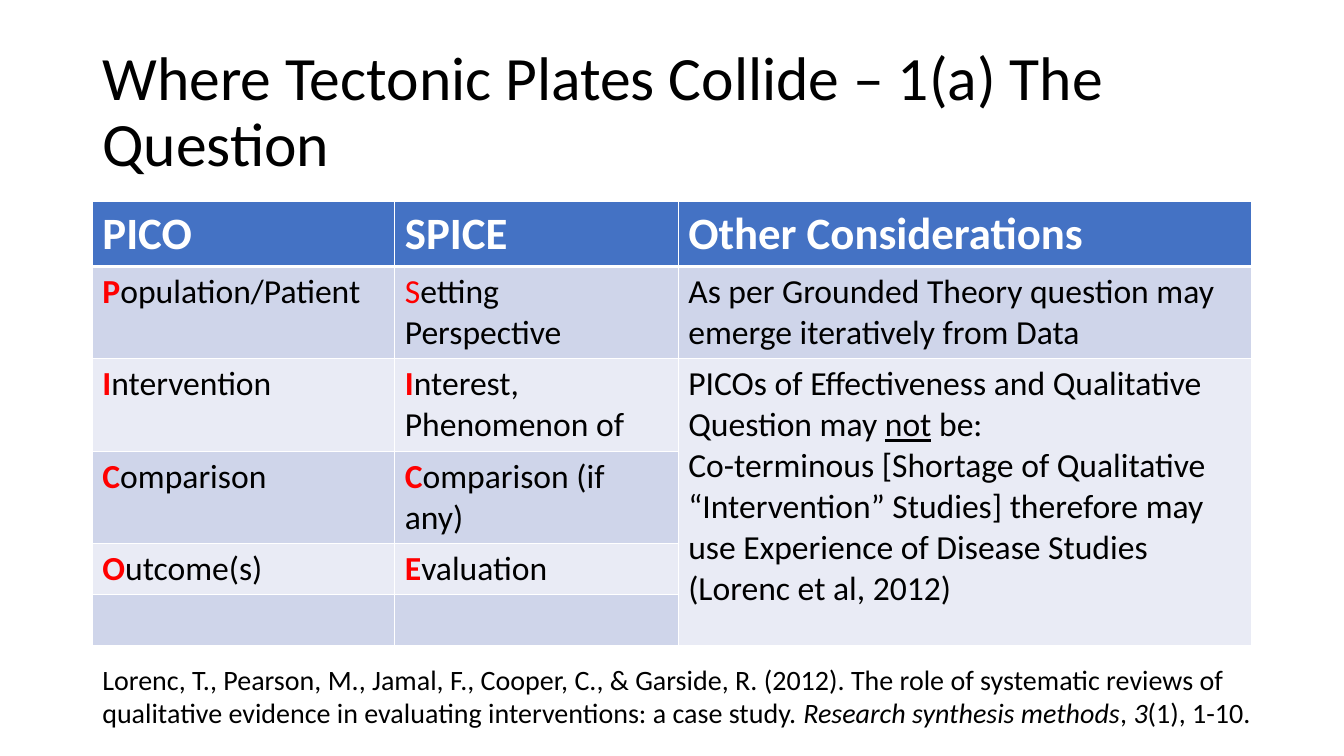
import dataclasses

import lxml.etree
import pptx
import pptx.dml.color
import pptx.enum.text
import pptx.oxml
import pptx.oxml.ns
import pptx.table
import pptx.text.text
import pptx.util

Pt = pptx.util.Pt
FONT = "Calibri"
COLOURS = {
    "text": "000000",
    "initial": "FF0000",
    "header_text": "FFFFFF",
    "header": "4472C4",
    "odd_row": "CFD5EA",
    "even_row": "E9EBF5",
    "border": "FFFFFF",
}
LEFT, WIDTH = 66, 828
COLUMN_WIDTHS = (216, 202.5, 409.5)
ROW_HEIGHTS = (46, 66, 66, 66, 36.5, 36.5)


@dataclasses.dataclass(frozen=True)
class Span:
    text: str
    colour: str = "text"
    bold: bool = False
    italic: bool = False
    underline: bool = False


Paragraph = list[Span]
CellText = list[Paragraph]


def mnemonic(term: str, bold: bool = True) -> Paragraph:
    """Set off the first letter of a term in red."""
    return [Span(term[0], "initial", bold), Span(term[1:])]


def heading(label: str) -> CellText:
    return [[Span(label, "header_text", bold=True)]]


QUESTION_ROWS: list[list[CellText]] = [
    [heading("PICO"), heading("SPICE"), heading("Other Considerations")],
    [
        [mnemonic("Population/Patient")],
        [mnemonic("Setting", bold=False), [Span("Perspective")]],
        [[Span("As per Grounded Theory question may emerge iteratively from Data")]],
    ],
    [
        [mnemonic("Intervention")],
        [mnemonic("Interest, Phenomenon of")],
        [
            [
                Span("PICOs of Effectiveness and Qualitative Question may "),
                Span("not", underline=True),
                Span(" be:"),
            ],
            [Span("Co-terminous [Shortage of Qualitative “Intervention” Studies] therefore "
                  "may use Experience of Disease Studies (Lorenc et al, 2012)")],
        ],
    ],
    [[mnemonic("Comparison")], [mnemonic("Comparison (if any)")], []],
    [[mnemonic("Outcome(s)")], [mnemonic("Evaluation")], []],
    [[], [], []],
]
CITATION: CellText = [[
    Span("Lorenc, T., Pearson, M., Jamal, F., Cooper, C., & Garside, R. (2012). The role of "
         "systematic reviews of qualitative evidence in evaluating interventions: "
         "a case study. "),
    Span("Research synthesis methods", italic=True),
    Span(", "),
    Span("3", italic=True),
    Span("(1), 1-10."),
]]


def rgb(name: str) -> pptx.dml.color.RGBColor:
    return pptx.dml.color.RGBColor.from_string(COLOURS[name])


def write(frame: pptx.text.text.TextFrame, paragraphs: CellText, size: float) -> None:
    for index, spans in enumerate(paragraphs):
        paragraph = frame.add_paragraph() if index else frame.paragraphs[0]
        for span in spans:
            run = paragraph.add_run()
            run.text = span.text
            font = run.font
            font.name, font.size = FONT, Pt(size)
            font.bold, font.italic, font.underline = span.bold, span.italic, span.underline
            font.color.rgb = rgb(span.colour)


def draw_borders(cell: pptx.table._Cell, top: float, bottom: float) -> None:
    properties = cell._tc.get_or_add_tcPr()
    sides = {"lnL": 1, "lnR": 1, "lnT": top, "lnB": bottom}
    for position, (side, width) in enumerate(sides.items()):
        line = lxml.etree.Element(pptx.oxml.ns.qn(f"a:{side}"), w=str(Pt(width)))
        fill = lxml.etree.SubElement(line, pptx.oxml.ns.qn("a:solidFill"))
        lxml.etree.SubElement(fill, pptx.oxml.ns.qn("a:srgbClr"), val=COLOURS["border"])
        properties.insert(position, line)


def fill_table(table: pptx.table.Table) -> None:
    for column, width in zip(table.columns, COLUMN_WIDTHS):
        column.width = Pt(width)
    for row, height in zip(table.rows, ROW_HEIGHTS):
        row.height = Pt(height)
    table.cell(2, 2).merge(table.cell(5, 2))
    for row_index, row_texts in enumerate(QUESTION_ROWS):
        is_header = row_index == 0
        shade = "header" if is_header else "odd_row" if row_index % 2 else "even_row"
        for column_index, cell_text in enumerate(row_texts):
            cell = table.cell(row_index, column_index)
            cell.fill.solid()
            cell.fill.fore_color.rgb = rgb(shade)
            draw_borders(cell, top=3 if row_index == 1 else 1, bottom=3 if is_header else 1)
            write(cell.text_frame, cell_text, 32 if is_header else 24)


def main() -> None:
    deck = pptx.Presentation()
    deck.slide_width, deck.slide_height = Pt(960), Pt(540)
    slide = deck.slides.add_slide(deck.slide_layouts[5])

    title = slide.shapes.title
    title.left, title.top, title.width, title.height = Pt(LEFT), Pt(28.75), Pt(WIDTH), Pt(104.4)
    title_frame = title.text_frame
    title_frame.word_wrap = True
    title_frame.auto_size = pptx.enum.text.MSO_AUTO_SIZE.NONE
    title_frame.vertical_anchor = pptx.enum.text.MSO_ANCHOR.MIDDLE
    write(title_frame, [[Span("Where Tectonic Plates Collide – 1(a) The Question")]], 44)
    title_frame.paragraphs[0].alignment = pptx.enum.text.PP_ALIGN.LEFT
    title_frame.paragraphs[0].line_spacing = 0.9

    question_table = slide.shapes.add_table(
        len(QUESTION_ROWS), len(COLUMN_WIDTHS),
        Pt(LEFT), Pt(144), Pt(WIDTH), Pt(sum(ROW_HEIGHTS)),
    ).table
    fill_table(question_table)

    citation = slide.shapes.add_textbox(Pt(LEFT), Pt(469.5), Pt(838), Pt(55.5))
    citation.text_frame.word_wrap = True
    write(citation.text_frame, CITATION, 20)

    deck.save("out.pptx")


if __name__ == "__main__":
    main()
